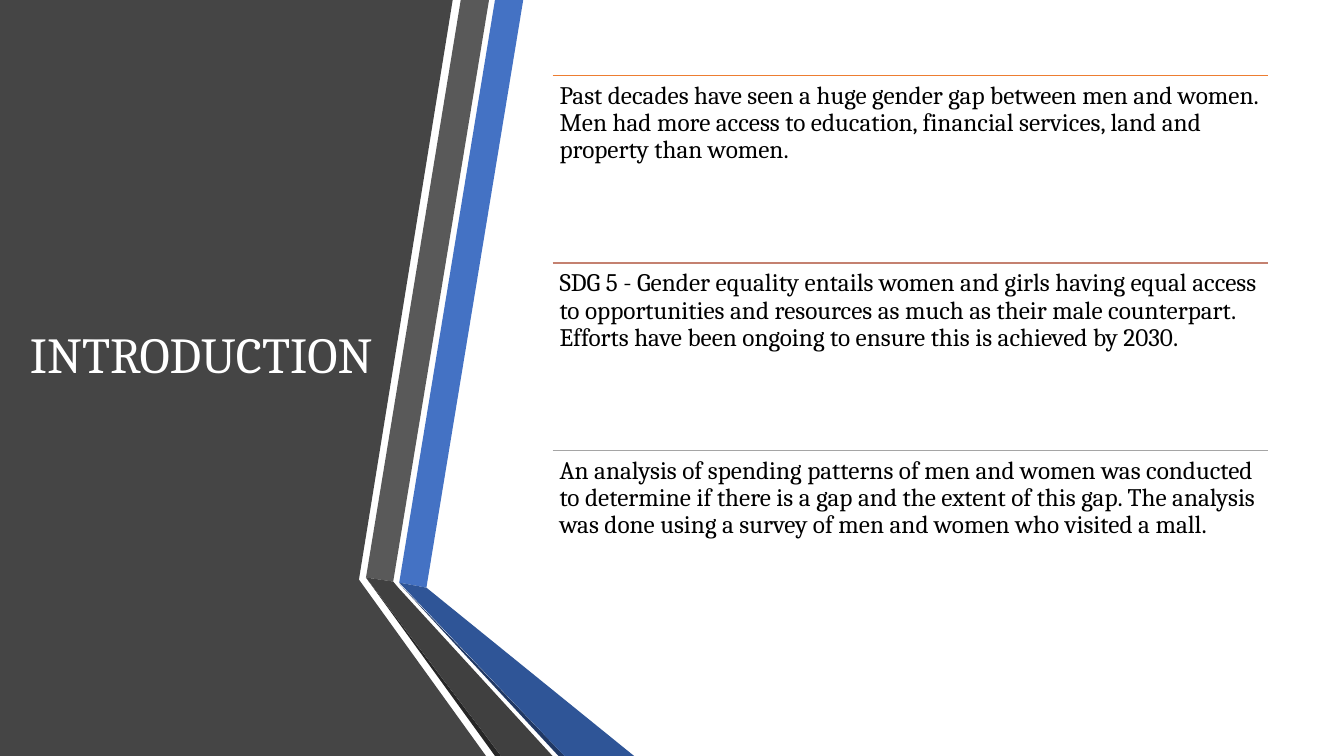
"""Build the introduction slide with its angled side panel and three ruled statements."""
from dataclasses import dataclass

from lxml import etree
from pptx import Presentation
from pptx.dml.color import RGBColor
from pptx.enum.shapes import MSO_CONNECTOR
from pptx.enum.text import MSO_ANCHOR, MSO_AUTO_SIZE, PP_ALIGN
from pptx.oxml.ns import qn
from pptx.slide import Slide
from pptx.text.text import TextFrame
from pptx.util import Inches, Pt

STRAIGHT = MSO_CONNECTOR.STRAIGHT
MIDDLE, TOP = MSO_ANCHOR.MIDDLE, MSO_ANCHOR.TOP
CENTER, LEFT = PP_ALIGN.CENTER, PP_ALIGN.LEFT
NO_AUTOFIT = MSO_AUTO_SIZE.NONE
TITLE_ONLY_LAYOUT = 5


@dataclass(frozen=True)
class Theme:
    font: str = "Cambria"
    title_size: int = 36
    body_size: int = 18
    rule_width: int = 1
    line_spacing: float = 0.9
    space_after: int = 6
    title_color: str = "FFFFFF"
    body_color: str = "000000"
    panel: str = "454545"
    blue: str = "4472C4"
    blue_fold: str = "2F5597"
    blue_edge: str = "203864"
    gray: str = "595959"
    gray_fold: str = "404040"
    gray_edge: str = "262626"
    orange_rule: str = "ED7D31"
    rose_rule: str = "C48170"
    silver_rule: str = "A5A5A5"


@dataclass(frozen=True)
class Band:
    color: str
    points: tuple[tuple[float, float], ...]


@dataclass(frozen=True)
class Statement:
    rule_color: str
    text: str


THEME = Theme()
SLIDE_WIDTH, SLIDE_HEIGHT = 13.33, 7.5
STATEMENT_LEFT, STATEMENT_TOP = 5.48, 0.75
STATEMENT_WIDTH, STATEMENT_HEIGHT = 7.1, 1.86
STATEMENT_INSET = 0.07

BANDS = (
    Band(THEME.panel, ((0, 0), (4.49, 0), (3.56, 5.75), (4.82, 7.5), (0, 7.5))),
    Band(THEME.blue, ((3.96, 5.78), (4.23, 5.83), (5.19, 0), (4.91, 0))),
    Band(THEME.gray, ((4.85, 0), (4.57, 0), (3.63, 5.73), (3.9, 5.77))),
    Band(THEME.gray_edge, ((3.63, 5.73), (4.91, 7.5), (4.97, 7.5))),
    Band(THEME.blue_edge, ((3.96, 5.79), (5.54, 7.5), (5.6, 7.5))),
    Band(THEME.blue_fold, ((3.96, 5.78), (5.6, 7.5), (6.29, 7.5), (4.23, 5.83))),
    Band(THEME.gray_fold, ((3.63, 5.73), (4.97, 7.5), (5.48, 7.5), (3.95, 5.83), (3.9, 5.77))),
)

STATEMENTS = (
    Statement(
        THEME.orange_rule,
        "Past decades have seen a huge gender gap between men and women. Men had more "
        "access to education, financial services, land and property than women.",
    ),
    Statement(
        THEME.rose_rule,
        "SDG 5 - Gender equality entails women and girls having equal access to "
        "opportunities and resources as much as their male counterpart. Efforts have "
        "been ongoing to ensure this is achieved by 2030.",
    ),
    Statement(
        THEME.silver_rule,
        "An analysis of spending patterns of men and women was conducted to determine "
        "if there is a gap and the extent of this gap. The analysis was done using a "
        "survey of men and women who visited a mall.",
    ),
)


def draw_band(slide: Slide, band: Band) -> None:
    start, *others = [(Inches(x), Inches(y)) for x, y in band.points]
    builder = slide.shapes.build_freeform(*start)
    builder.add_line_segments(others, close=True)
    shape = builder.convert_to_shape()
    shape.shadow.inherit = False
    shape.fill.solid()
    shape.fill.fore_color.rgb = RGBColor.from_string(band.color)
    shape.line.fill.background()


def write_text(
    text_frame: TextFrame, text: str, size: int, color: str, alignment: PP_ALIGN, anchor: MSO_ANCHOR
) -> None:
    text_frame.text = text
    text_frame.word_wrap = True
    text_frame.auto_size = NO_AUTOFIT
    text_frame.vertical_anchor = anchor
    paragraph = text_frame.paragraphs[0]
    paragraph.alignment = alignment
    paragraph.line_spacing = THEME.line_spacing
    paragraph.space_after = Pt(THEME.space_after)
    font = paragraph.runs[0].font
    font.name = THEME.font
    font.size = Pt(size)
    font.color.rgb = RGBColor.from_string(color)


def draw_title(slide: Slide, text: str) -> None:
    title = slide.shapes.title
    title.left, title.top = Inches(-0.1), Inches(0.75)
    title.width, title.height = Inches(4.19), Inches(5.58)
    write_text(title.text_frame, text, THEME.title_size, THEME.title_color, CENTER, MIDDLE)
    title.element.getparent().append(title.element)


def draw_statement(slide: Slide, statement: Statement, top: float) -> None:
    left, width = Inches(STATEMENT_LEFT), Inches(STATEMENT_WIDTH)
    rule = slide.shapes.add_connector(STRAIGHT, left, Inches(top), left + width, Inches(top))
    rule.line.color.rgb = RGBColor.from_string(statement.rule_color)
    rule.line.width = Pt(THEME.rule_width)
    etree.SubElement(rule.element.spPr, qn("a:effectLst"))

    box = slide.shapes.add_textbox(left, Inches(top), width, Inches(STATEMENT_HEIGHT))
    text_frame = box.text_frame
    text_frame.margin_left = text_frame.margin_right = Inches(STATEMENT_INSET)
    text_frame.margin_top = text_frame.margin_bottom = Inches(STATEMENT_INSET)
    write_text(text_frame, statement.text, THEME.body_size, THEME.body_color, LEFT, TOP)


def main() -> None:
    presentation = Presentation()
    presentation.slide_width = Inches(SLIDE_WIDTH)
    presentation.slide_height = Inches(SLIDE_HEIGHT)
    slide = presentation.slides.add_slide(presentation.slide_layouts[TITLE_ONLY_LAYOUT])
    for band in BANDS:
        draw_band(slide, band)
    draw_title(slide, "INTRODUCTION")
    for index, statement in enumerate(STATEMENTS):
        draw_statement(slide, statement, STATEMENT_TOP + index * STATEMENT_HEIGHT)
    presentation.save("out.pptx")


if __name__ == "__main__":
    main()
